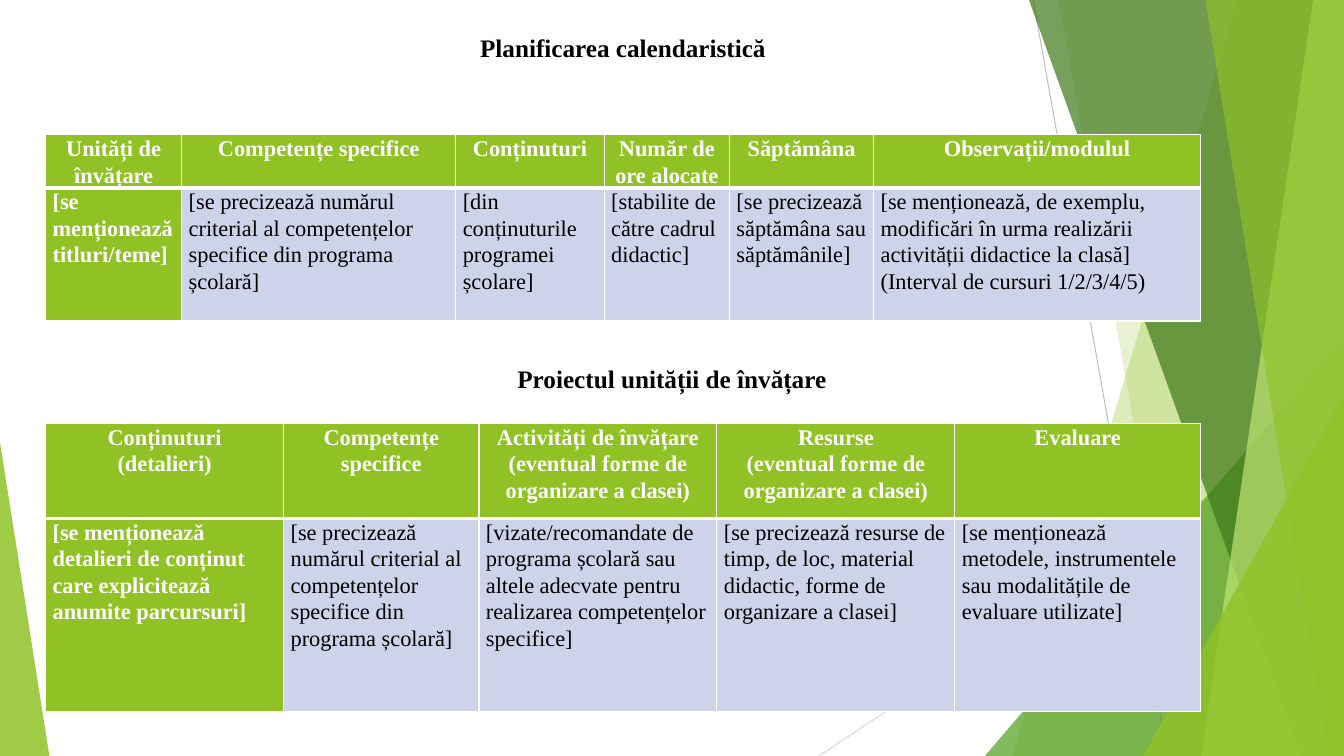
from dataclasses import dataclass

from lxml.etree import SubElement as Sub
from pptx import Presentation
from pptx.dml.color import RGBColor
from pptx.enum.shapes import MSO_CONNECTOR as Conn, MSO_SHAPE as Kind
from pptx.enum.text import PP_ALIGN as Align
from pptx.oxml import parse_xml
from pptx.oxml.ns import nsdecls, qn
from pptx.util import Pt

WIDTH, HEIGHT = 960, 540
FONT = "Times New Roman"
BLACK = RGBColor(0, 0, 0)
WHITE = RGBColor(0xFF, 0xFF, 0xFF)
GREEN = RGBColor(0x90, 0xC2, 0x26)
LEAF = RGBColor(0x54, 0xA0, 0x21)
MOSS = RGBColor(0x3F, 0x78, 0x19)
LIME = RGBColor(0xC0, 0xE4, 0x74)
BLUE = RGBColor(0xCD, 0xD4, 0xEA)
GREY = RGBColor(0xBF, 0xBF, 0xBF)
PALE = RGBColor(0xD9, 0xD9, 0xD9)


@dataclass
class Ray:
    start: tuple[float, float]
    end: tuple[float, float]
    color: RGBColor


@dataclass
class Band:
    """Area from a slanted left edge to the right side of the slide."""
    top_x: float
    foot_x: float
    color: RGBColor
    alpha: int


@dataclass
class Wedge:
    """Triangle standing on the bottom of the slide; apex is 0 (left) to 1 (right)."""
    left: float
    top: float
    width: float
    apex: float
    color: RGBColor
    alpha: int


@dataclass
class Title:
    text: str
    box: tuple[float, float, float, float]
    wrap: bool


@dataclass
class Grid:
    top: float
    cols: list[float]
    rows: list[float]
    texts: list[list[str]]


RAYS = [
    Ray((738, 0), (834, HEIGHT), GREY),
    Ray((WIDTH, 290), (585, HEIGHT), PALE),
]
DECOR = [
    Band(884, 723, GREEN, 30),
    Band(756, 852, GREEN, 20),
    Wedge(703.5, 240, 256.5, 1, LEAF, 72),
    Band(735, 929.5, MOSS, 70),
    Band(938, 858, LIME, 70),
    Band(861, 949, GREEN, 65),
    Wedge(816.5, 283, 143.5, 1, GREEN, 80),
    Wedge(0, 316, 35.3, 0, GREEN, 85),
]
TITLES = [
    Title("Planificarea calendaristică", (39, 19.5, 812, 51), True),
    Title("Proiectul unității de învățare", (361.2, 255.6, 237.6, 29), False),
]
SKILLS = "[se precizează numărul criterial al competențelor specifice din programa școlară]"
FORMS = "(eventual forme de organizare a clasei)"
GRIDS = [
    Grid(96.3, [97.2, 195.8, 106, 89.5, 103, 233.5], [38, 95], [
        ["Unități de învățare", "Competențe specifice", "Conținuturi",
         "Număr de ore alocate", "Săptămâna", "Observații/modulul"],
        ["[se menționează titluri/teme]", SKILLS,
         "[din conținuturile programei școlare]",
         "[stabilite de către cadrul didactic]",
         "[se precizează săptămâna sau săptămânile]",
         "[se menționează, de exemplu, modificări în urma realizării "
         "activității didactice la clasă]\n(Interval de cursuri 1/2/3/4/5)"],
    ]),
    Grid(302.6, [170, 139.5, 170, 170, 175.5], [67.8, 137.6], [
        ["Conținuturi\n(detalieri)", "Competențe specifice",
         f"Activități de învățare\n{FORMS}", f"Resurse\n{FORMS}", "Evaluare"],
        ["[se menționează detalieri de conținut care explicitează anumite parcursuri]",
         SKILLS,
         "[vizate/recomandate de programa școlară sau altele adecvate pentru "
         "realizarea competențelor specifice]",
         "[se precizează resurse de timp, de loc, material didactic, "
         "forme de organizare a clasei]",
         "[se menționează metodele, instrumentele sau modalitățile de evaluare utilizate]"],
    ]),
]


def draw_ray(shapes, ray: Ray) -> None:
    line = shapes.add_connector(Conn.STRAIGHT, *map(Pt, ray.start + ray.end))
    line.line.color.rgb = ray.color
    line.line.width = Pt(0.75)
    Sub(line._element.spPr, qn("a:effectLst"))


def draw_decor(shapes, item: Band | Wedge) -> None:
    if isinstance(item, Band):
        pen = shapes.build_freeform(Pt(item.top_x), 0)
        pen.add_line_segments([(Pt(WIDTH), 0), (Pt(WIDTH), Pt(HEIGHT)),
                               (Pt(item.foot_x), Pt(HEIGHT))])
        shape = pen.convert_to_shape()
    else:
        shape = shapes.add_shape(Kind.ISOSCELES_TRIANGLE, Pt(item.left), Pt(item.top),
                                 Pt(item.width), Pt(HEIGHT - item.top))
        shape.adjustments[0] = item.apex
    shape.shadow.inherit = False
    shape.line.fill.background()
    shape.fill.solid()
    shape.fill.fore_color.rgb = item.color
    tint = shape._element.spPr.find(qn("a:solidFill")).find(qn("a:srgbClr"))
    Sub(tint, qn("a:alpha"), val=str(item.alpha * 1000))


def set_font(par, size: float, color: RGBColor, bold: bool) -> None:
    font = par.font
    font.name, font.size, font.bold = FONT, Pt(size), bold
    font.color.rgb = color


def draw_title(shapes, title: Title) -> None:
    frame = shapes.add_textbox(*map(Pt, title.box)).text_frame
    frame.word_wrap = title.wrap
    frame.text = title.text
    par = frame.paragraphs[0]
    par.alignment = Align.CENTER
    set_font(par, 18, BLACK, True)


def set_edges(cell, head: bool) -> None:
    """White cell borders, thick between the header and the body."""
    widths = {"L": 1, "R": 1, "T": 1 if head else 3, "B": 3 if head else 1}
    props = cell._tc.get_or_add_tcPr()
    for spot, (side, width) in enumerate(widths.items()):
        props.insert(spot, parse_xml(
            f'<a:ln{side} {nsdecls("a")} w="{Pt(width)}"><a:solidFill>'
            f'<a:srgbClr val="{WHITE}"/></a:solidFill></a:ln{side}>'))


def fill_cell(cell, text: str, head: bool, first: bool) -> None:
    strong = head or first
    cell.text = text
    cell.margin_left = cell.margin_right = Pt(5)
    cell.margin_top = cell.margin_bottom = 0
    cell.fill.solid()
    cell.fill.fore_color.rgb = GREEN if strong else BLUE
    set_edges(cell, head)
    for par in cell.text_frame.paragraphs:
        par.alignment = Align.CENTER if head else Align.LEFT
        par.line_spacing = 1.07
        set_font(par, 16, WHITE if strong else BLACK, strong)


def draw_grid(shapes, grid: Grid) -> None:
    table = shapes.add_table(len(grid.rows), len(grid.cols), Pt(32.6), Pt(grid.top),
                             Pt(sum(grid.cols)), Pt(sum(grid.rows))).table
    table.horz_banding = False
    for col, width in zip(table.columns, grid.cols):
        col.width = Pt(width)
    for row, height in zip(table.rows, grid.rows):
        row.height = Pt(height)
    for r, texts in enumerate(grid.texts):
        for c, text in enumerate(texts):
            fill_cell(table.cell(r, c), text, r == 0, c == 0)


def main() -> None:
    deck = Presentation()
    deck.slide_width, deck.slide_height = Pt(WIDTH), Pt(HEIGHT)
    shapes = deck.slides.add_slide(deck.slide_layouts[6]).shapes
    for ray in RAYS:
        draw_ray(shapes, ray)
    for item in DECOR:
        draw_decor(shapes, item)
    for grid, title in zip(GRIDS, TITLES):
        draw_grid(shapes, grid)
        draw_title(shapes, title)
    deck.save("out.pptx")


if __name__ == "__main__":
    main()
